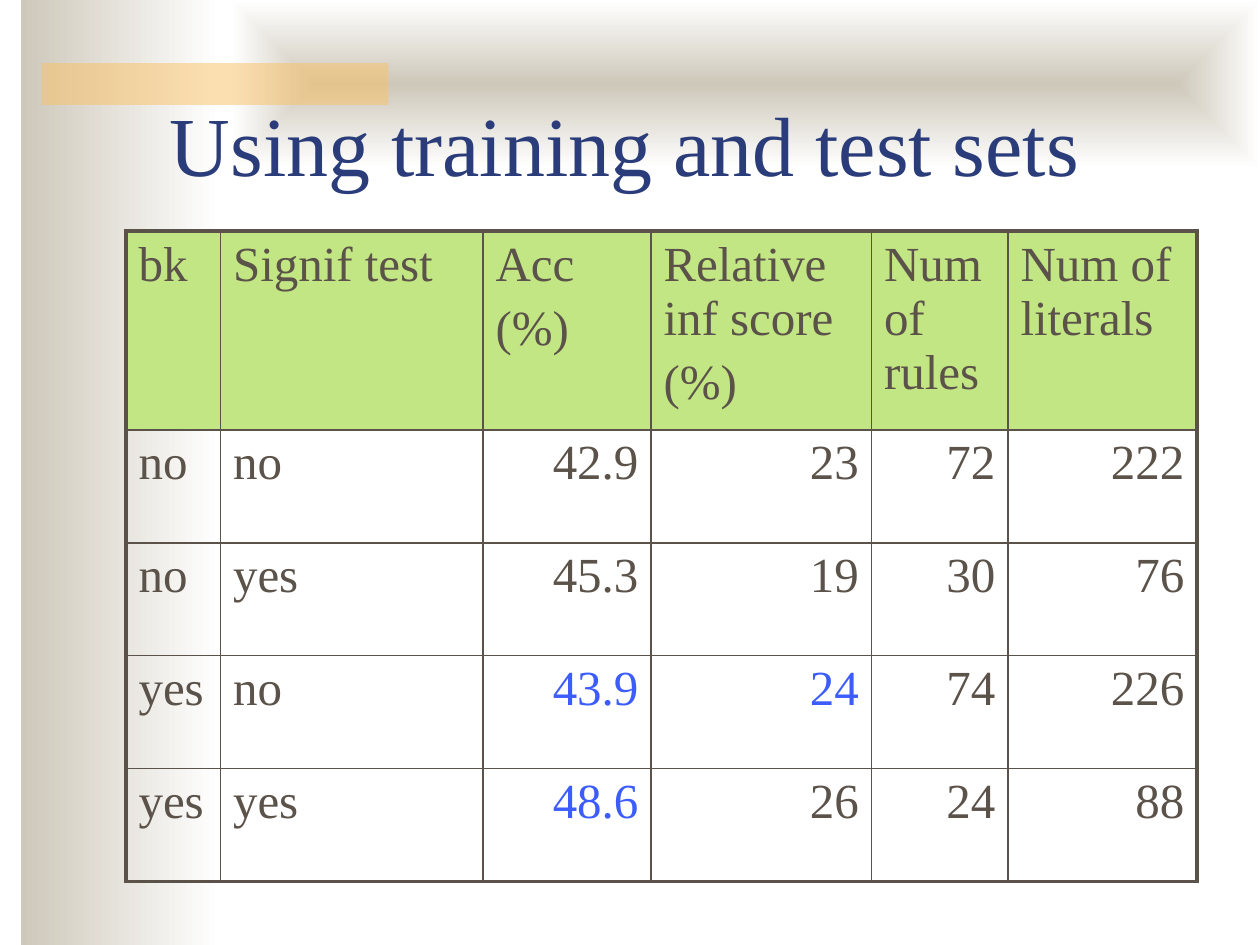
from dataclasses import dataclass

from lxml.etree import SubElement
from pptx import Presentation
from pptx.dml.color import RGBColor as Color
from pptx.enum.shapes import MSO_SHAPE as Preset
from pptx.enum.text import MSO_ANCHOR as Anchor, PP_ALIGN as Align
from pptx.oxml.ns import qn
from pptx.util import Pt

PX = 9525  # EMU per px, 96 px to the inch
NO_STYLE = "{2D5ABB26-0587-4C30-8999-92F81FD0307C}"


@dataclass(frozen=True)
class Theme:
    font: str = "Times New Roman"
    title_size: int = 48
    table_size: int = 28
    paragraph_gap: float = 5.6
    outer_line: float = 2.25
    inner_line: float = 1
    white: str = "FFFFFF"
    stone: str = "CEC8BA"
    accent: str = "FAC164"
    title: str = "2A3D7A"
    text: str = "5B5249"
    header: str = "C3E684"
    highlight: str = "3C5CFC"


THEME = Theme()

HEADERS = ["bk", "Signif test", "Acc\n(%)", "Relative inf score\n(%)",
           "Num of rules", "Num of literals"]
RESULTS = [
    ["no", "no", "42.9", "23", "72", "222"],
    ["no", "yes", "45.3", "19", "30", "76"],
    ["yes", "no", "43.9", "24", "74", "226"],
    ["yes", "yes", "48.6", "26", "24", "88"],
]
HIGHLIGHTED = {(3, 2), (3, 3), (4, 2)}  # (row, column)
COLUMN_WIDTHS = [72, 200, 128, 168, 104, 144]
ROW_HEIGHT = 86
FIRST_NUMBER_COLUMN = 2


def emu(*lengths):
    return [length * PX for length in lengths]


def format_text(paragraph, size, color, **paragraph_format):
    for name, value in paragraph_format.items():
        setattr(paragraph, name, value)
    for name, value in {"name": THEME.font, "size": Pt(size)}.items():
        setattr(paragraph.font, name, value)
    paragraph.font.color.rgb = Color.from_string(color)


def add_rectangle(slide, box):
    shape = slide.shapes.add_shape(Preset.RECTANGLE, *emu(*box))
    shape.shadow.inherit = False
    shape.line.fill.background()
    return shape


def add_gradient_rectangle(slide, box, from_center=False):
    """Fade from stone to white, left to right or outward from the center."""
    fill = add_rectangle(slide, box).fill
    fill.gradient()
    fill.gradient_angle = 0
    for stop, color in zip(fill.gradient_stops, (THEME.stone, THEME.white)):
        stop.color.rgb = Color.from_string(color)
    if from_center:
        linear = next(fill._xPr.iter(qn("a:lin")))
        gradient = linear.getparent()
        gradient.remove(linear)
        shading = SubElement(gradient, qn("a:path"), {"path": "shape"})
        SubElement(shading, qn("a:fillToRect"), dict.fromkeys("ltrb", "50000"))


def add_backdrop(slide, box):
    left, top, width, height = box
    add_gradient_rectangle(slide, (left + 16, top, 152, height))
    add_gradient_rectangle(slide, (left + 176, top, width - 176, 128), from_center=True)
    bar = add_rectangle(slide, (left + 32, top + 48, 264, 32))
    bar.fill.solid()
    bar.fill.fore_color.rgb = Color.from_string(THEME.accent)
    color = next(bar.fill._xPr.iter(qn("a:srgbClr")))
    SubElement(color, qn("a:alpha"), {"val": "50000"})


def add_title(slide, box, text):
    frame = slide.shapes.add_textbox(*emu(*box)).text_frame
    for name, value in {"word_wrap": True, "vertical_anchor": Anchor.BOTTOM}.items():
        setattr(frame, name, value)
    frame.text = text
    format_text(frame.paragraphs[0], THEME.title_size, THEME.title)


def set_borders(cell, outer_sides):
    properties = cell._tc.get_or_add_tcPr()
    for side in "LRTB":
        width = THEME.outer_line if side in outer_sides else THEME.inner_line
        line = SubElement(properties, qn(f"a:ln{side}"), {"w": str(Pt(width))})
        solid = SubElement(line, qn("a:solidFill"))
        SubElement(solid, qn("a:srgbClr"), {"val": THEME.text})


def fill_cell(cell, text, color, align, is_header):
    cell.text = text
    for index, paragraph in enumerate(cell.text_frame.paragraphs):
        gap = Pt(THEME.paragraph_gap if index else 0)
        format_text(paragraph, THEME.table_size, color, alignment=align, space_before=gap)
    if is_header:
        cell.fill.solid()
        cell.fill.fore_color.rgb = Color.from_string(THEME.header)
    else:
        cell.fill.background()


def add_results_table(slide, box):
    rows = [HEADERS, *RESULTS]
    last_row, last_column = len(rows) - 1, len(HEADERS) - 1
    table = slide.shapes.add_table(len(rows), len(HEADERS), *emu(*box)).table
    for name in ("first_row", "horz_banding"):
        setattr(table, name, False)
    next(table._tbl.iter(qn("a:tableStyleId"))).text = NO_STYLE
    for column, width in zip(table.columns, COLUMN_WIDTHS):
        column.width = width * PX
    for row_index, values in enumerate(rows):
        table.rows[row_index].height = ROW_HEIGHT * PX
        for column_index, text in enumerate(values):
            cell = table.cell(row_index, column_index)
            is_header = row_index == 0
            edges = {"L": column_index == 0, "R": column_index == last_column,
                     "T": is_header, "B": row_index == last_row}
            set_borders(cell, [side for side, is_outer in edges.items() if is_outer])
            is_number = not is_header and column_index >= FIRST_NUMBER_COLUMN
            highlighted = (row_index, column_index) in HIGHLIGHTED
            fill_cell(cell, text, THEME.highlight if highlighted else THEME.text,
                      Align.RIGHT if is_number else Align.LEFT, is_header)


def main():
    presentation = Presentation()
    presentation.slide_width, presentation.slide_height = emu(960, 720)
    slide = presentation.slides.add_slide(presentation.slide_layouts[6])
    add_backdrop(slide, (0, 0, 960, 720))
    add_title(slide, (120, 32, 936, 120), "Using training and test sets")
    add_results_table(slide, (96, 176, sum(COLUMN_WIDTHS), 498))
    presentation.save("out.pptx")


if __name__ == "__main__":
    main()
